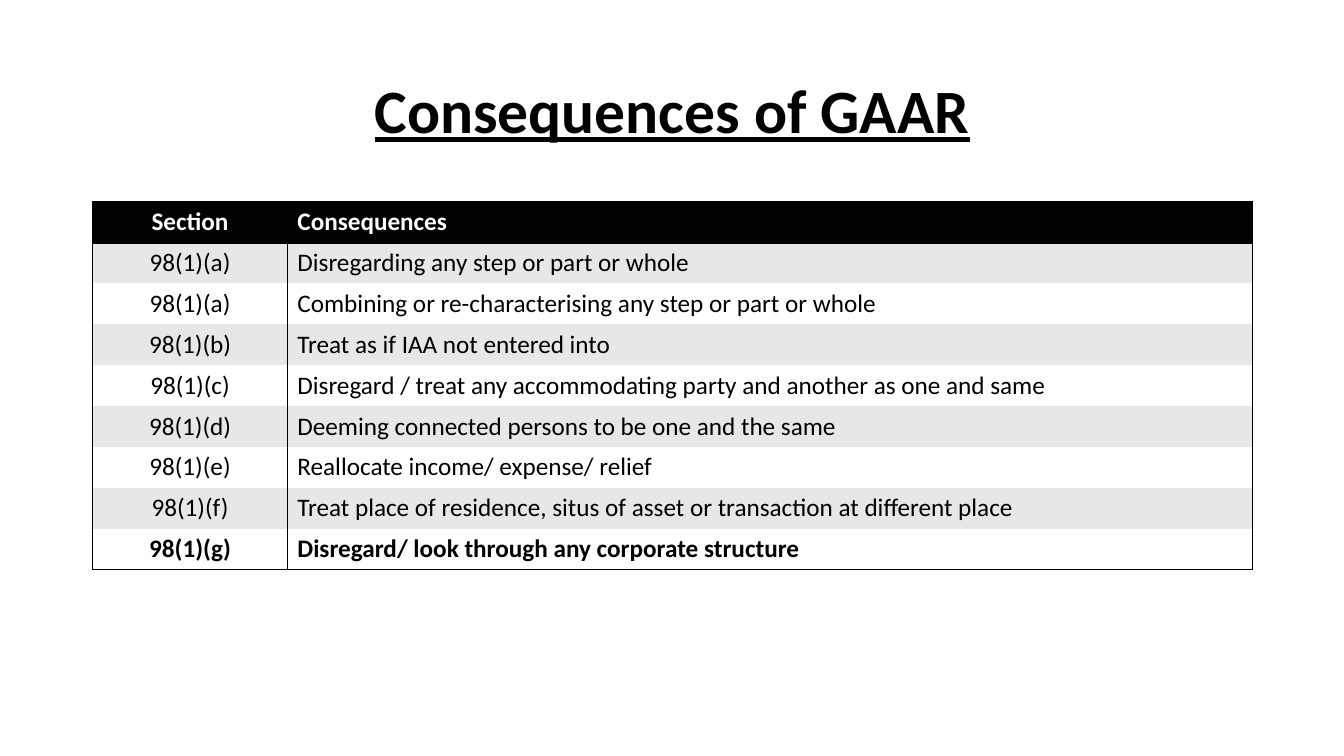
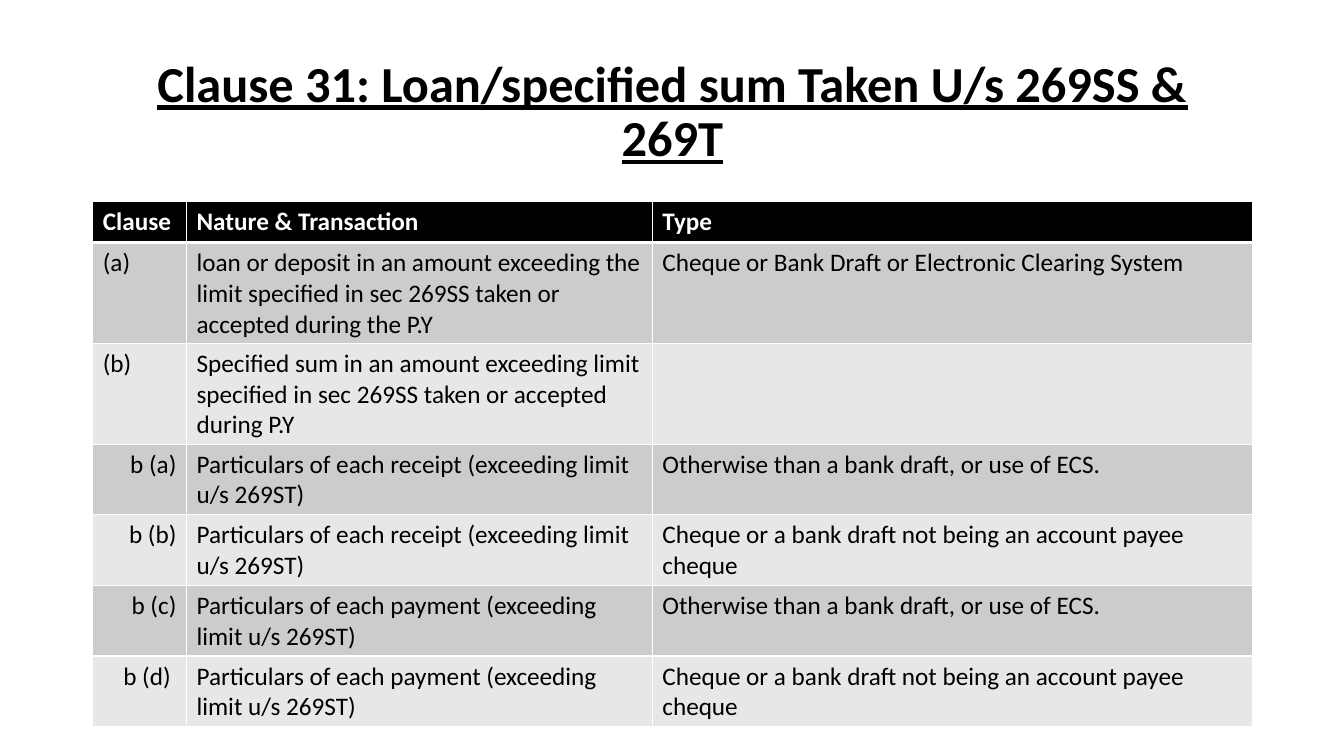
from dataclasses import dataclass

from lxml.etree import SubElement
from pptx import Presentation
from pptx.dml.color import RGBColor
from pptx.enum.text import MSO_ANCHOR, PP_ALIGN
from pptx.oxml.ns import qn
from pptx.util import Inches, Pt


@dataclass(frozen=True)
class Theme:
    """Hold the colours, type sizes and places that the slides share."""
    font: str = "Calibri"
    black: str = "000000"
    white: str = "FFFFFF"
    pale: str = "E7E7E7"
    grey: str = "CCCCCC"
    body: int = 18
    large: int = 44
    small: int = 36
    left: float = 0.92
    width: float = 11.5
    top: float = 2
    row: float = 3.65 / 9


@dataclass(frozen=True)
class Look:
    """Describe the bands and rules of a table, with line widths in points."""
    odd: str
    even: str
    line: str
    head: float
    inner: float


THEME = Theme()
RULED = Look(THEME.pale, THEME.white, THEME.black, head=2, inner=0)
GRID = Look(THEME.grey, THEME.pale, THEME.white, head=3, inner=1)

EFFECTS = [
    ("Section", "Consequences"),
    ("98(1)(a)", "Disregarding any step or part or whole"),
    ("98(1)(a)", "Combining or re-characterising any step or part or whole"),
    ("98(1)(b)", "Treat as if IAA not entered into"),
    ("98(1)(c)", "Disregard / treat any accommodating party and another as one and same"),
    ("98(1)(d)", "Deeming connected persons to be one and the same"),
    ("98(1)(e)", "Reallocate income/ expense/ relief"),
    ("98(1)(f)", "Treat place of residence, situs of asset or transaction at different place"),
    ("98(1)(g)", "Disregard/ look through any corporate structure"),
]

RECEIPT = "Particulars of each receipt (exceeding limit u/s 269ST)"
PAYMENT = "Particulars of each payment (exceeding limit u/s 269ST)"
OTHER = "Otherwise than a bank draft, or use of ECS."
CHEQUE = "Cheque or a bank draft not being an account payee cheque"
CLAUSES = [
    ("Clause", "Nature & Transaction", "Type"),
    ("(a)", "loan or deposit in an amount exceeding the limit specified in sec 269SS "
            "taken or accepted during the P.Y",
     "Cheque or Bank Draft or Electronic Clearing System"),
    ("(b)", "Specified sum in an amount exceeding limit specified in sec 269SS "
            "taken or accepted during P.Y", ""),
    ("b (a)", RECEIPT, OTHER),
    ("b (b)", RECEIPT, CHEQUE),
    ("b (c)", PAYMENT, OTHER),
    ("b (d) ", PAYMENT, CHEQUE),
]


def write(frame, text, size=THEME.body, color=THEME.black, bold=False,
          line=False, align=PP_ALIGN.LEFT, space=1.0):
    """Write one formatted paragraph into a text frame."""
    para = frame.paragraphs[0]
    para.alignment = align
    para.line_spacing = space
    if not text:
        return
    run = para.add_run()
    run.text = text
    font = run.font
    font.name = THEME.font
    font.size = Pt(size)
    font.bold = bold
    font.underline = line
    font.color.rgb = RGBColor.from_string(color)


def add_title(slide, text, size):
    """Add the centred, underlined slide title."""
    box = slide.shapes.add_textbox(
        Inches(THEME.left), Inches(0.4), Inches(THEME.width), Inches(1.45))
    frame = box.text_frame
    frame.word_wrap = True
    frame.vertical_anchor = MSO_ANCHOR.MIDDLE
    write(frame, text, size=size, bold=True, line=True,
          align=PP_ALIGN.CENTER, space=0.9)


def add_rules(cell, color, left, right, top, bottom):
    """Draw the four borders of a cell, leaving out those of zero width."""
    props = cell._tc.get_or_add_tcPr()
    for side, width in zip("LRTB", (left, right, top, bottom)):
        rule = SubElement(props, qn(f"a:ln{side}"), w=str(Pt(width)))
        if width:
            fill = SubElement(rule, qn("a:solidFill"))
            SubElement(fill, qn("a:srgbClr"), val=color)
        else:
            SubElement(rule, qn("a:noFill"))


def add_grid(slide, rows, widths, look, sides, strong=()):
    """Add a banded table whose first column is aligned row by row."""
    count = len(rows)
    table = slide.shapes.add_table(
        count, len(widths), Inches(THEME.left), Inches(THEME.top),
        Inches(THEME.width), Inches(THEME.row * count)).table
    for column, width in zip(table.columns, widths):
        column.width = Inches(width)
    rules = [1, look.head] + [look.inner] * (count - 2) + [1]
    for r, texts in enumerate(rows):
        head = r == 0
        band = THEME.black if head else look.odd if r % 2 else look.even
        for c, text in enumerate(texts):
            cell = table.cell(r, c)
            add_rules(cell, look.line, 1, 1, rules[r], rules[r + 1])
            cell.fill.solid()
            cell.fill.fore_color.rgb = RGBColor.from_string(band)
            write(cell.text_frame, text, bold=head or r in strong,
                  color=THEME.white if head else THEME.black,
                  align=PP_ALIGN.LEFT if c else sides[r])


def main():
    """Build both slides and save the deck."""
    deck = Presentation()
    deck.slide_width = Inches(13.33)
    deck.slide_height = Inches(7.5)
    blank = deck.slide_layouts[6]

    slide = deck.slides.add_slide(blank)
    add_title(slide, "Consequences of GAAR", THEME.large)
    add_grid(slide, EFFECTS, (1.93, 9.57), RULED,
             [PP_ALIGN.CENTER] * len(EFFECTS), strong=(len(EFFECTS) - 1,))

    slide = deck.slides.add_slide(blank)
    add_title(slide, "Clause 31: Loan/specified sum Taken U/s 269SS & 269T", THEME.small)
    add_grid(slide, CLAUSES, (0.93, 4.62, 5.95), GRID,
             [PP_ALIGN.LEFT] * 3 + [PP_ALIGN.RIGHT] * 4)

    deck.save("out.pptx")


if __name__ == "__main__":
    main()
